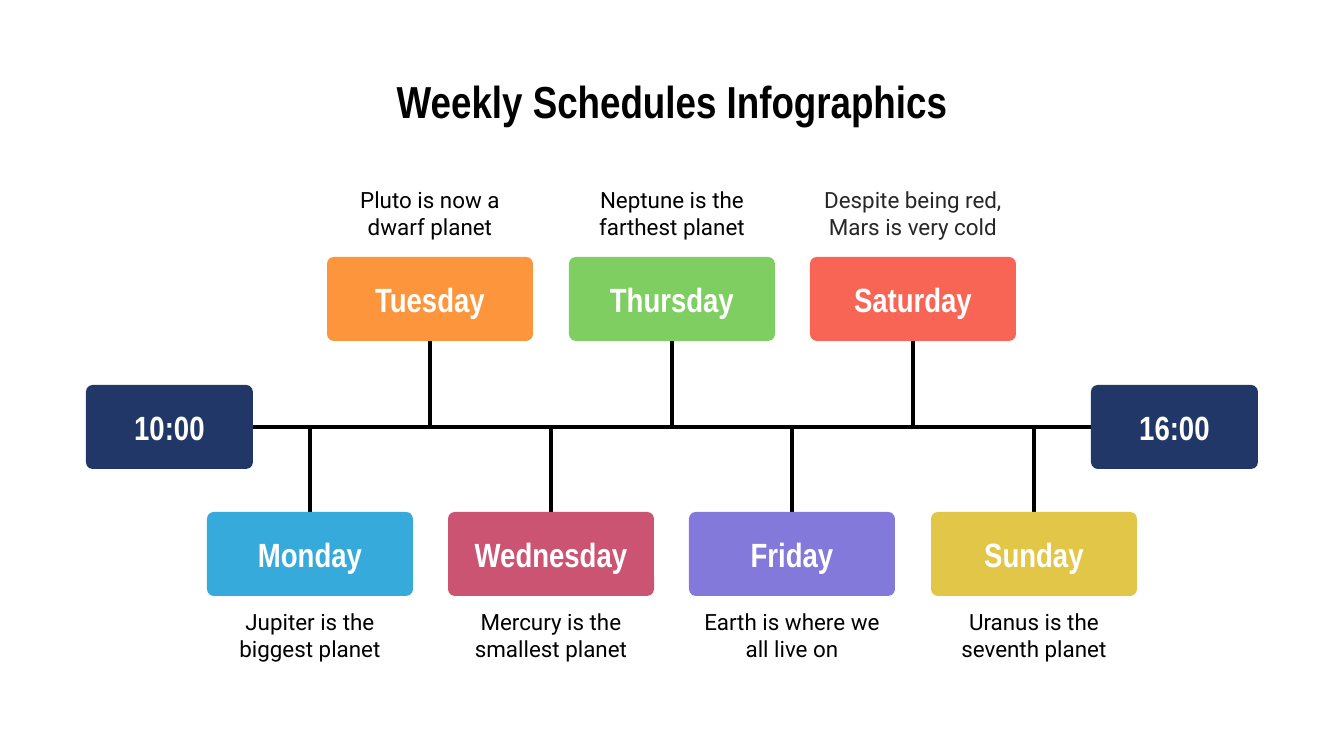
from lxml import etree
from pptx import Presentation
from pptx import util as u
from pptx.dml.color import RGBColor
from pptx.enum import shapes, text
from pptx.oxml.ns import qn

PIXEL = 914400 / 134.4
COLORS = {
    "black": "000000", "charcoal": "272727", "white": "FFFFFF", "navy": "213768",
    "blue": "36AADA", "orange": "FD953C", "rose": "CC5473", "green": "7FCE62",
    "violet": "8379DA", "red": "F86554", "yellow": "E2C648",
}
FORMATS = {
    "title": {"name": "Arial Narrow", "size": u.Pt(24), "bold": True},
    "box": {"name": "Arial Narrow", "size": u.Pt(18), "bold": True},
    "label": {"name": "Roboto", "size": u.Pt(12), "bold": False},
}
DAYS = [
    ("Monday", "blue", "Jupiter is the biggest planet", "black"),
    ("Tuesday", "orange", "Pluto is now a dwarf planet", "black"),
    ("Wednesday", "rose", "Mercury is the smallest planet", "black"),
    ("Thursday", "green", "Neptune is the farthest planet", "black"),
    ("Friday", "violet", "Earth is where we all live on", "black"),
    ("Saturday", "red", "Despite being red, Mars is very cold", "charcoal"),
    ("Sunday", "yellow", "Uranus is the seventh planet", "black"),
]
TIMES = [("10:00", 86), ("16:00", 1091)]
AXIS_Y = 427
BOX_WIDTH, BOX_HEIGHT = 206, 84
LABEL_WIDTH, LABEL_HEIGHT = 208, 89
FIRST_CENTER, LAST_CENTER = 310, 1034

presentation = Presentation()
presentation.slide_width = round(1344 * PIXEL)
presentation.slide_height = round(756 * PIXEL)
slide = presentation.slides.add_slide(presentation.slide_layouts[6])


def add_text(wording, style, color, left, top, width, height, fill=None):
    area = [round(value * PIXEL) for value in (left, top, width, height)]
    if fill:
        shape = slide.shapes.add_shape(shapes.MSO_SHAPE.ROUNDED_RECTANGLE, *area)
        shape.adjustments[0] = 0.08
        shape.shadow.inherit = False
        shape.fill.solid()
        shape.fill.fore_color.rgb = RGBColor.from_string(COLORS[fill])
        shape.line.fill.background()
    else:
        shape = slide.shapes.add_textbox(*area)
    frame = shape.text_frame
    frame.word_wrap = True
    frame.vertical_anchor = text.MSO_ANCHOR.MIDDLE if fill else text.MSO_ANCHOR.TOP
    for side in ("left", "top", "right", "bottom"):
        setattr(frame, f"margin_{side}", u.Inches(0.1))
    paragraph = frame.paragraphs[0]
    paragraph.alignment = text.PP_ALIGN.CENTER
    run = paragraph.add_run()
    run.text = wording
    run.font.color.rgb = RGBColor.from_string(COLORS[color])
    for attribute, value in FORMATS[style].items():
        setattr(run.font, attribute, value)


def add_line(*ends):
    connector = slide.shapes.add_connector(
        shapes.MSO_CONNECTOR.STRAIGHT, *[round(value * PIXEL) for value in ends])
    connector.line.color.rgb = RGBColor.from_string(COLORS["black"])
    connector.line.width = u.Pt(2.25)
    etree.SubElement(connector._element.spPr, qn("a:effectLst"))


add_text("Weekly Schedules Infographics", "title", "black", 67, 60, 1210, 85)

add_line(125, AXIS_Y, 1202, AXIS_Y)
for time, left in TIMES:
    add_text(time, "box", "white", left, AXIS_Y - BOX_HEIGHT // 2, 167, BOX_HEIGHT, "navy")

for index, (day, fill, label, label_color) in enumerate(DAYS):
    center = FIRST_CENTER + index * (LAST_CENTER - FIRST_CENTER) // (len(DAYS) - 1)
    above = index % 2 == 1
    box_top, label_top = (257, 173) if above else (512, 595)
    add_line(center, box_top + BOX_HEIGHT if above else AXIS_Y,
             center, AXIS_Y if above else box_top)
    add_text(day, "box", "white", center - BOX_WIDTH // 2, box_top,
             BOX_WIDTH, BOX_HEIGHT, fill)
    add_text(label, "label", label_color, center - LABEL_WIDTH // 2, label_top,
             LABEL_WIDTH, LABEL_HEIGHT)

presentation.save("out.pptx")
